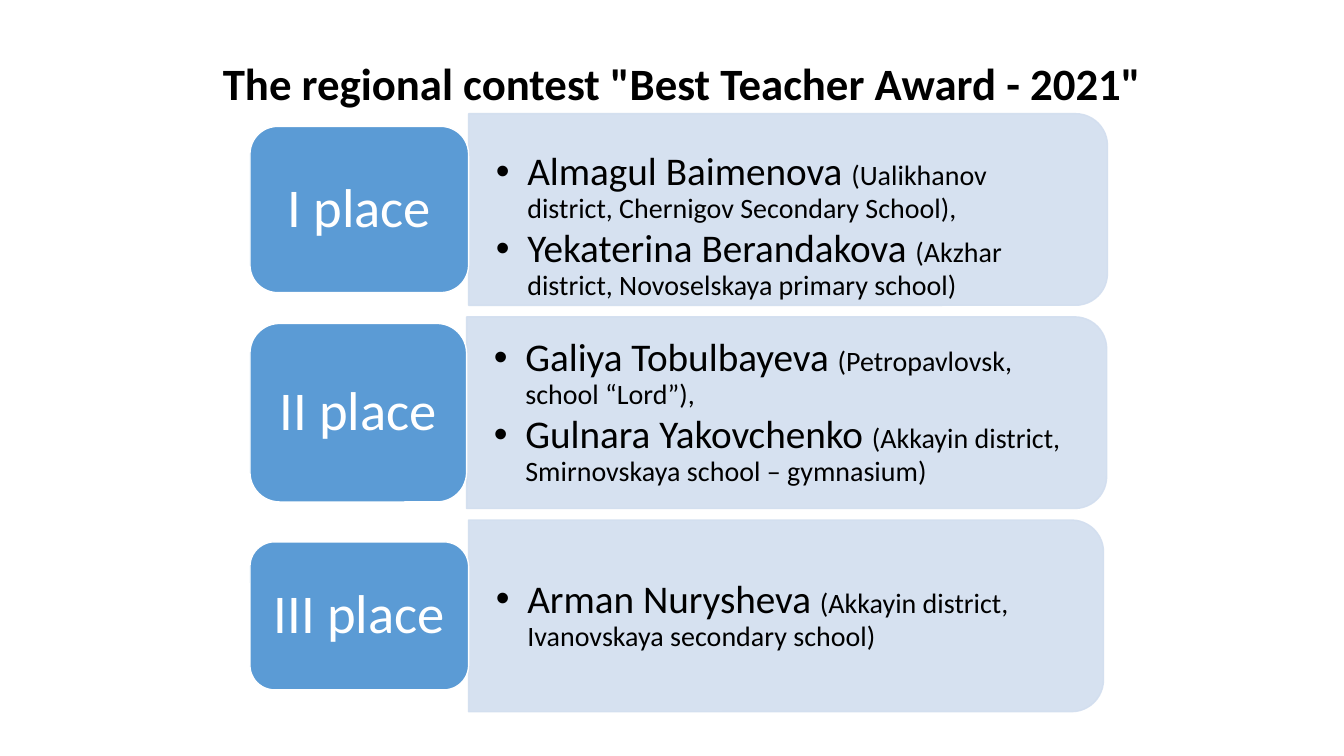
from lxml import etree
from pptx import Presentation
from pptx.dml.color import RGBColor
from pptx.enum.shapes import MSO_SHAPE as SHAPE
from pptx.enum.text import MSO_ANCHOR as ANCHOR, MSO_AUTO_SIZE as AUTO_SIZE, PP_ALIGN as ALIGN
from pptx.oxml.ns import qn
from pptx.util import Cm, Pt

COLORS = {"label": "5B9BD5", "panel": "D2DEEF", "white": "FFFFFF", "black": "000000"}

# Label, label width and height, panel width, downward shift of the list (cm), winners
PLACES = [
    ("I place", 5.51, 4.19, 16.1, 0.43, [
        ("Almagul Baimenova ", "(Ualikhanov district, Chernigov Secondary School),"),
        ("Yekaterina Berandakova ", "(Akzhar district, Novoselskaya primary school)")]),
    ("II place", 5.46, 4.5, 16.13, 0, [
        ("Galiya Tobulbayeva ", "(Petropavlovsk, school “Lord”),"),
        ("Gulnara Yakovchenko ", "(Akkayin district, Smirnovskaya school – gymnasium)")]),
    ("III place", 5.51, 3.73, 16, 0, [
        ("Arman Nurysheva ", "(Akkayin district, Ivanovskaya secondary school)")]),
]
LABEL_LEFT = 6.3
FIRST_MIDDLE, ROW_PITCH = 5.28, 5.12
PANEL_HEIGHT, LIST_HEIGHT = 4.83, 4.34


def add_run(p, text, size, color="black", bold=False):
    r = p.add_run()
    r.text = text
    r.font.name = "Calibri"
    r.font.size = Pt(size)
    r.font.bold = bold
    r.font.color.rgb = RGBColor.from_string(COLORS[color])


def paint(sp, fill, line, alpha=None):
    sp.shadow.inherit = False
    sp.fill.solid()
    sp.fill.fore_color.rgb = RGBColor.from_string(COLORS[fill])
    sp.line.color.rgb = RGBColor.from_string(COLORS[line])
    sp.line.width = Pt(1)
    if alpha:
        for color in sp._element.spPr.iter(qn("a:srgbClr")):
            etree.SubElement(color, qn("a:alpha"), val=str(alpha * 1000))


prs = Presentation()
prs.slide_width, prs.slide_height = Cm(33.87), Cm(19.05)
s = prs.slides.add_slide(prs.slide_layouts[5])

# Title
title = s.shapes.title
title.left, title.top, title.width, title.height = Cm(5.36), Cm(1.27), Cm(24.13), Cm(1.63)
tf = title.text_frame
tf.auto_size = AUTO_SIZE.NONE
tf.vertical_anchor = ANCHOR.TOP
p = tf.paragraphs[0]
p.alignment = ALIGN.LEFT
add_run(p, 'The regional contest "Best Teacher Award - 2021"', 32, bold=True)

for i, (place, label_w, label_h, panel_w, shift, winners) in enumerate(PLACES):
    middle = FIRST_MIDDLE + i * ROW_PITCH
    panel_left = LABEL_LEFT + label_w

    # Panel, turned so that its rounded corners face right
    panel = s.shapes.add_shape(
        SHAPE.ROUND_2_SAME_RECTANGLE,
        Cm(panel_left + (panel_w - PANEL_HEIGHT) / 2), Cm(middle - panel_w / 2),
        Cm(PANEL_HEIGHT), Cm(panel_w))
    panel.rotation = 90
    paint(panel, "panel", "panel", alpha=90)

    # Winners
    box = s.shapes.add_textbox(Cm(panel_left), Cm(middle - LIST_HEIGHT / 2 + shift),
                               Cm(panel_w - 0.25), Cm(LIST_HEIGHT))
    tf = box.text_frame
    tf.word_wrap = True
    tf.vertical_anchor = ANCHOR.MIDDLE
    tf.margin_left = tf.margin_right = Cm(0.69)
    tf.margin_top = tf.margin_bottom = 0
    for n, (name, school) in enumerate(winners):
        p = tf.add_paragraph() if n else tf.paragraphs[0]
        p.line_spacing = 0.9
        p.space_before = Pt(3 if n else 0)
        pPr = p._p.get_or_add_pPr()
        pPr.set("marL", str(Cm(0.79)))
        pPr.set("indent", str(-Cm(0.79)))
        etree.SubElement(pPr, qn("a:buFont"), typeface="Arial")
        etree.SubElement(pPr, qn("a:buChar"), char="•")
        add_run(p, name, 28)
        add_run(p, school, 20)

    # Place label
    label = s.shapes.add_shape(SHAPE.ROUNDED_RECTANGLE, Cm(LABEL_LEFT),
                               Cm(middle - label_h / 2), Cm(label_w), Cm(label_h))
    paint(label, "label", "white")
    tf = label.text_frame
    tf.vertical_anchor = ANCHOR.MIDDLE
    p = tf.paragraphs[0]
    p.alignment = ALIGN.CENTER
    p.line_spacing = 0.9
    add_run(p, place, 39, color="white")

prs.save("out.pptx")
